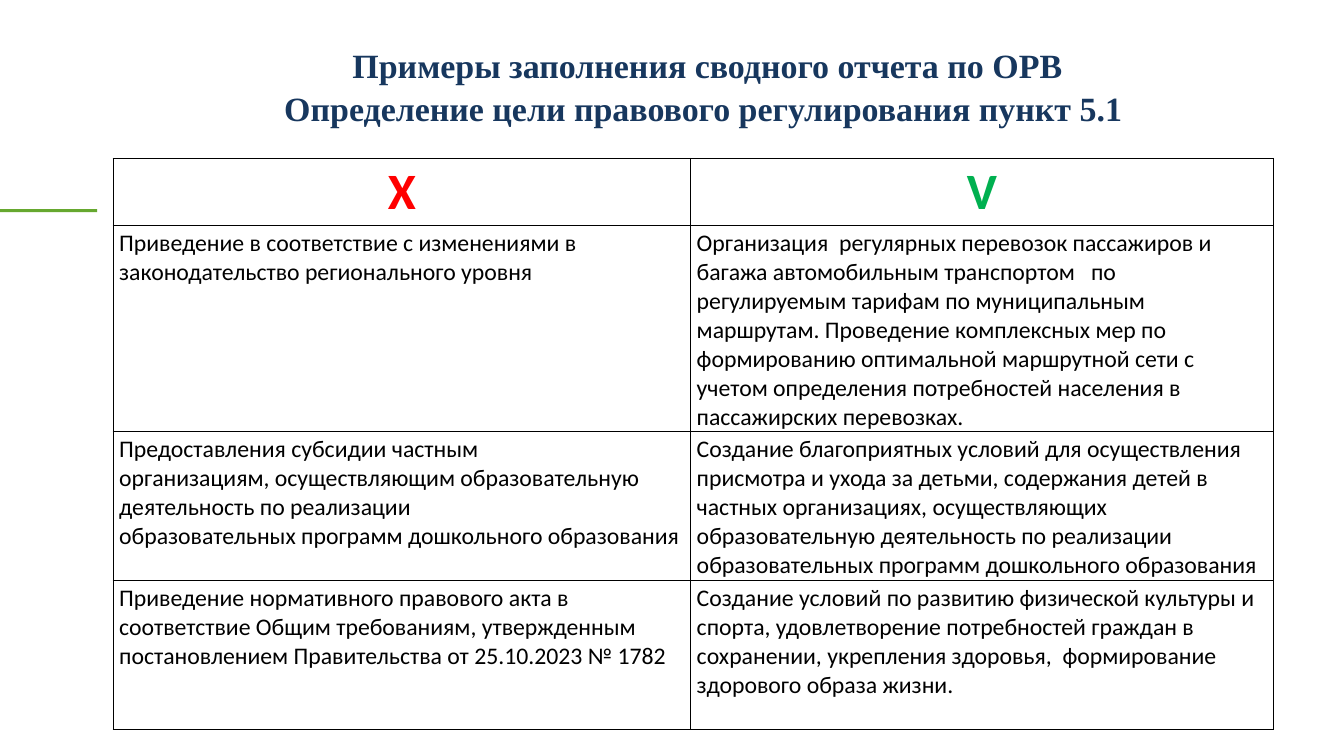
from lxml import etree
from pptx import Presentation
from pptx import util as u
from pptx.dml.color import RGBColor
from pptx.enum import shapes, text
from pptx.oxml.ns import qn

WIDTH, HEIGHT = u.Inches(21.99), u.Inches(12.37)
NAVY = RGBColor(0x17, 0x37, 0x5E)
GREEN_LINE = RGBColor(0x66, 0xA8, 0x2F)
RED = RGBColor(0xFF, 0x00, 0x00)
GREEN = RGBColor(0x00, 0xB0, 0x50)
BLACK = RGBColor(0x00, 0x00, 0x00)

TITLE = [
    "Примеры заполнения сводного отчета по ОРВ",
    "Определение цели правового регулирования пункт 5.1 ",
]
HEADERS = [("X", RED), ("V", GREEN)]
# Each example: a list of paragraphs for the wrong and the right wording
EXAMPLES = [
    (["Приведение в соответствие с изменениями в законодательство регионального уровня"],
     ["Организация  регулярных перевозок пассажиров и багажа автомобильным транспортом   по "
      "регулируемым тарифам по муниципальным маршрутам. Проведение комплексных мер по "
      "формированию оптимальной маршрутной сети с учетом определения потребностей населения "
      "в пассажирских перевозках."]),
    (["Предоставления субсидии частным",
      "организациям, осуществляющим образовательную деятельность по реализации",
      "образовательных программ дошкольного образования"],
     ["Создание благоприятных условий для осуществления присмотра и ухода за детьми, "
      "содержания детей в частных организациях, осуществляющих образовательную деятельность "
      "по реализации образовательных программ дошкольного образования"]),
    (["Приведение нормативного правового акта в соответствие Общим требованиям, "
      "утвержденным постановлением Правительства от 25.10.2023 № 1782"],
     ["Создание условий по развитию физической культуры и спорта, удовлетворение "
      "потребностей граждан в сохранении, укрепления здоровья,  формирование здорового "
      "образа жизни."]),
]
COLUMN_WIDTHS = [9.45, 9.53]
ROW_HEIGHTS = [1.1, 3.37, 2.44, 2.44]


def write_paragraphs(frame, lines, size, color, font, bold=False, centred=False, spacing=None):
    for index, line in enumerate(lines):
        paragraph = frame.paragraphs[0] if index == 0 else frame.add_paragraph()
        paragraph.text = line
        paragraph.alignment = text.PP_ALIGN.CENTER if centred else text.PP_ALIGN.LEFT
        if spacing:
            paragraph.line_spacing = spacing
        paragraph.font.size = u.Pt(size)
        paragraph.font.name = font
        paragraph.font.bold = bold
        paragraph.font.color.rgb = color


def add_side_line(slide):
    line = slide.shapes.add_shape(shapes.MSO_SHAPE.RECTANGLE, 0, u.Inches(3.42),
                                  u.Inches(1.59), u.Inches(0.05))
    line.shadow.inherit = False
    line.fill.solid()
    line.fill.fore_color.rgb = GREEN_LINE
    line.line.fill.background()


def add_title(slide):
    box = slide.shapes.add_textbox(u.Inches(3.88), u.Inches(0.64), u.Inches(15.39), u.Inches(1.45))
    box.text_frame.word_wrap = True
    write_paragraphs(box.text_frame, TITLE, 40, NAVY, "Times New Roman",
                     bold=True, centred=True, spacing=1.06)


def set_borders(cell):
    properties = cell._tc.get_or_add_tcPr()
    for position, side in enumerate(("a:lnL", "a:lnR", "a:lnT", "a:lnB")):
        border = etree.Element(qn(side), w=str(u.Pt(1)))
        fill = etree.SubElement(border, qn("a:solidFill"))
        etree.SubElement(fill, qn("a:srgbClr"), val=str(BLACK))
        properties.insert(position, border)


def fill_cell(cell, lines, size, color, **style):
    cell.margin_left = cell.margin_right = u.Inches(0.1)
    cell.margin_top, cell.margin_bottom = u.Inches(0.05), 0
    cell.fill.background()
    set_borders(cell)
    write_paragraphs(cell.text_frame, lines, size, color, "Calibri", **style)


def add_examples_table(slide):
    table = slide.shapes.add_table(
        len(ROW_HEIGHTS), len(COLUMN_WIDTHS), u.Inches(1.85), u.Inches(2.59),
        u.Inches(sum(COLUMN_WIDTHS)), u.Inches(sum(ROW_HEIGHTS))).table
    table.first_row = table.horz_banding = False
    for column, width in zip(table.columns, COLUMN_WIDTHS):
        column.width = u.Inches(width)
    for row, height in zip(table.rows, ROW_HEIGHTS):
        row.height = u.Inches(height)

    # Header marks
    for column, (mark, color) in enumerate(HEADERS):
        fill_cell(table.cell(0, column), [mark], 60, color, bold=True, centred=True)
    # Wrong and right wordings
    for row, example in enumerate(EXAMPLES, start=1):
        for column, lines in enumerate(example):
            fill_cell(table.cell(row, column), lines, 28, BLACK)


def main():
    presentation = Presentation()
    presentation.slide_width, presentation.slide_height = WIDTH, HEIGHT
    slide = presentation.slides.add_slide(presentation.slide_layouts[6])
    add_side_line(slide)
    add_title(slide)
    add_examples_table(slide)
    presentation.save("out.pptx")


if __name__ == "__main__":
    main()
